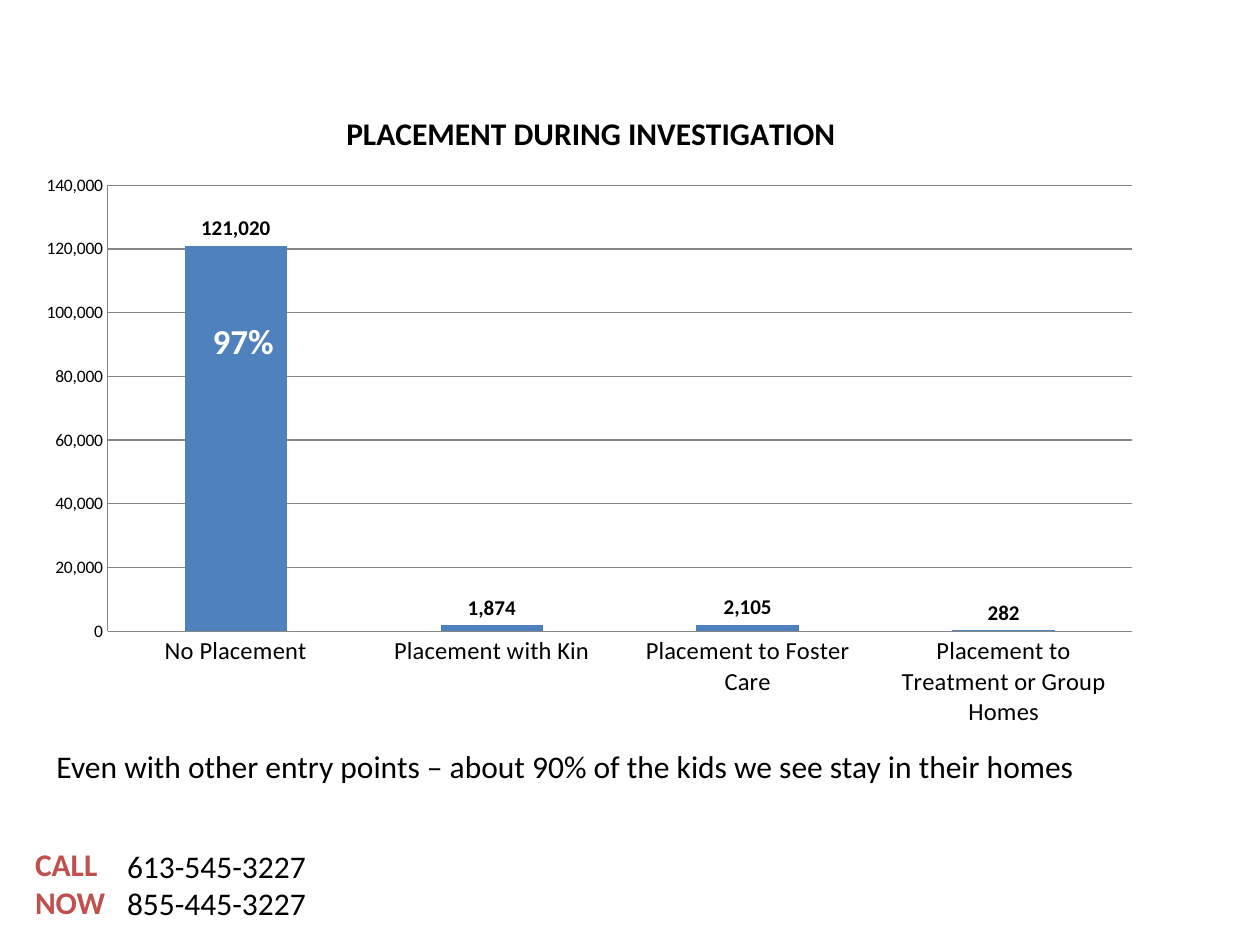
"""Build a slide charting child placement during investigation, with contact numbers."""
from lxml import etree
from pptx import Presentation
from pptx.chart.data import CategoryChartData
from pptx.dml.color import RGBColor
from pptx.enum.chart import XL_CHART_TYPE, XL_LABEL_POSITION, XL_TICK_MARK
from pptx.enum.text import PP_ALIGN
from pptx.oxml.ns import qn
from pptx.util import Inches, Pt

COLUMNS = XL_CHART_TYPE.COLUMN_CLUSTERED
OUTSIDE = XL_LABEL_POSITION.OUTSIDE_END
NO_TICK = XL_TICK_MARK.NONE
LEFT, CENTER = PP_ALIGN.LEFT, PP_ALIGN.CENTER

BLACK = RGBColor(0x00, 0x00, 0x00)
WHITE = RGBColor(0xFF, 0xFF, 0xFF)
RED = RGBColor(0xC0, 0x50, 0x4D)
BLUE = RGBColor(0x4F, 0x81, 0xBD)
GRAY = RGBColor(0x86, 0x86, 0x86)
FONT = "Calibri"
NUMBER_FORMAT = "#,##0"

TITLE = "PLACEMENT DURING INVESTIGATION"
PLACEMENTS = [
    ("No Placement", 121020),
    ("Placement with Kin", 1874),
    ("Placement to Foster Care", 2105),
    ("Placement to Treatment or Group Homes", 282),
]
CHART_AREA = (0.2, 0.68, 8.98, 5.2)
PLOT_AREA = (0.86, 1.47, 8.13, 3.54)

PHONES = ["613-545-3227", "855-445-3227"]
CALL_TO_ACTION = ["CALL", "NOW"]
SHARE = ["97%"]
SUMMARY = ["Even with other entry points – about 90% of the kids we see stay in their homes"]
CONTACT_TEXTS = [
    (PHONES, (0.91, 6.67, 1.65, 0.71), 18, BLACK, False, LEFT),
    (CALL_TO_ACTION, (0.18, 6.66, 0.94, 0.71), 18, RED, True, LEFT),
]
CHART_TEXTS = [
    (SHARE, (1.3, 2.49, 1.26, 0.44), 20, WHITE, True, CENTER),
    (SUMMARY, (0.35, 5.88, 8.5, 0.4), 18, BLACK, False, LEFT),
]


def style_font(font, size, color=BLACK, bold=False):
    font.name, font.size, font.bold = FONT, Pt(size), bold
    font.color.rgb = color


def add_text(slide, lines, area, size, color, bold, alignment):
    frame = slide.shapes.add_textbox(*map(Inches, area)).text_frame
    frame.word_wrap = True
    for index, line in enumerate(lines):
        para = frame.add_paragraph() if index else frame.paragraphs[0]
        para.alignment = alignment
        span = para.add_run()
        span.text = line
        style_font(span.font, size, color, bold)


def fix_plot_area(chart):
    plot_area = chart.plots[0]._element.getparent()
    for old in plot_area.findall(qn("c:layout")):
        plot_area.remove(old)
    layout = etree.Element(qn("c:layout"))
    plot_area.insert(0, layout)
    manual = etree.SubElement(layout, qn("c:manualLayout"))
    left, top, width, height = CHART_AREA
    x, y, w, h = PLOT_AREA
    settings = {
        "layoutTarget": "inner", "xMode": "edge", "yMode": "edge",
        "x": (x - left) / width, "y": (y - top) / height,
        "w": w / width, "h": h / height,
    }
    for name, value in settings.items():
        text = value if isinstance(value, str) else f"{value:.3f}"
        etree.SubElement(manual, qn(f"c:{name}")).set("val", text)


def add_placement_chart(slide):
    data = CategoryChartData(number_format=NUMBER_FORMAT)
    data.categories = [name for name, count in PLACEMENTS]
    data.add_series("Series 1", [count for name, count in PLACEMENTS])
    chart = slide.shapes.add_chart(COLUMNS, *map(Inches, CHART_AREA), data).chart
    style_font(chart.font, 10)
    chart.has_legend = False
    chart.has_title = True
    span = chart.chart_title.text_frame.paragraphs[0].add_run()
    span.text = TITLE
    style_font(span.font, 18, bold=True)
    chart.chart_title.include_in_layout = False

    for axis, size in ((chart.category_axis, 14), (chart.value_axis, 10)):
        axis.major_tick_mark = axis.minor_tick_mark = NO_TICK
        axis.format.line.color.rgb = GRAY
        style_font(axis.tick_labels.font, size)
    values = chart.value_axis
    values.minimum_scale, values.maximum_scale, values.major_unit = 0, 140000, 20000
    values.tick_labels.number_format = NUMBER_FORMAT
    values.tick_labels.number_format_is_linked = False
    values.has_major_gridlines = True
    values.major_gridlines.format.line.color.rgb = GRAY

    plot = chart.plots[0]
    plot.gap_width = 150
    plot.vary_by_categories = False
    fill = plot.series[0].format.fill
    fill.solid()
    fill.fore_color.rgb = BLUE
    labels = plot.series[0].data_labels
    labels.show_value = True
    labels.position = OUTSIDE
    labels.number_format = NUMBER_FORMAT
    labels.number_format_is_linked = False
    style_font(labels.font, 12, bold=True)
    fix_plot_area(chart)


def main():
    deck = Presentation()
    deck.slide_width, deck.slide_height = Inches(10), Inches(7.5)
    slide = deck.slides.add_slide(deck.slide_layouts.get_by_name("Blank"))
    for text in CONTACT_TEXTS:
        add_text(slide, *text)
    add_placement_chart(slide)
    for text in CHART_TEXTS:
        add_text(slide, *text)
    deck.save("out.pptx")


if __name__ == "__main__":
    main()
